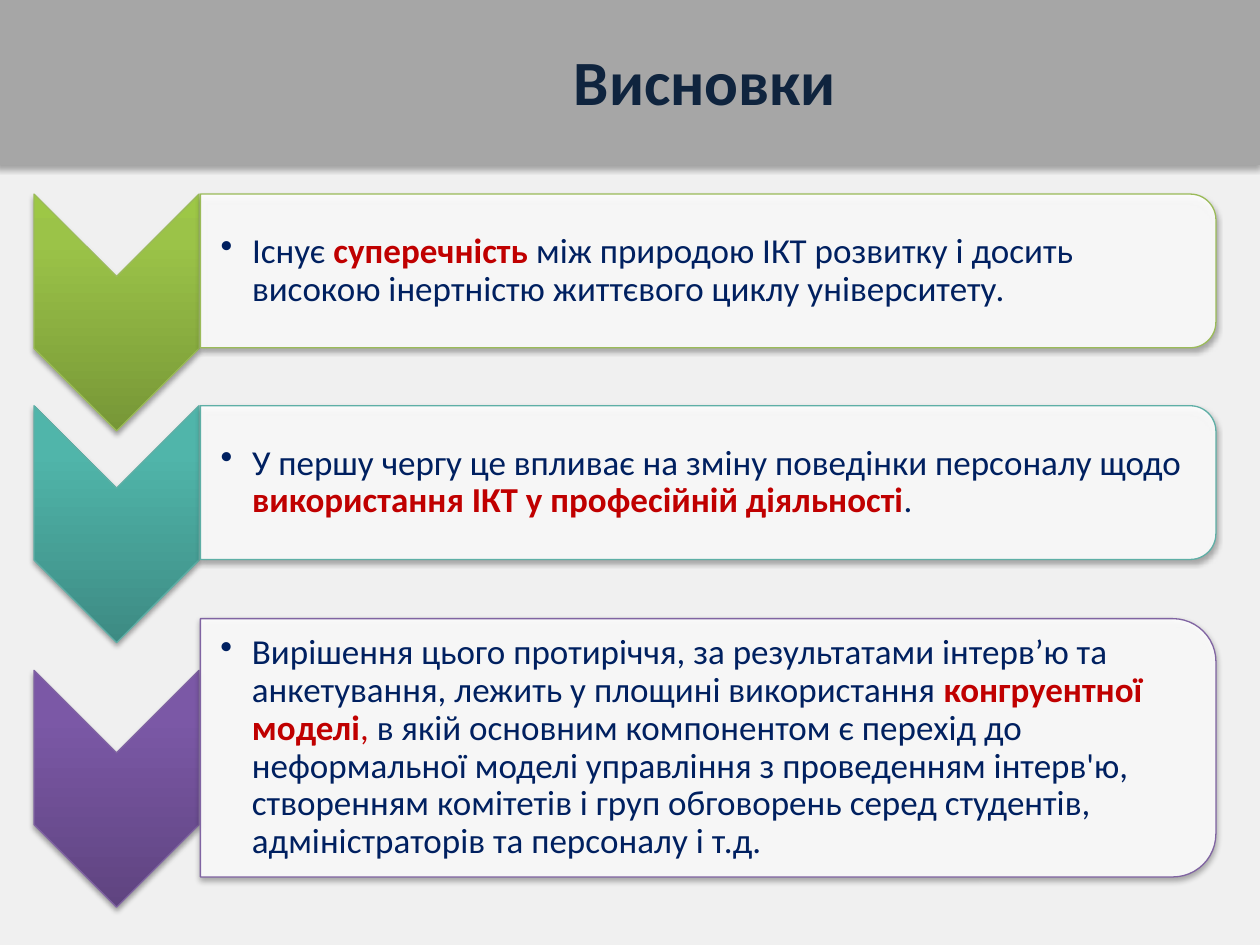
from lxml.etree import SubElement
from pptx import Presentation
from pptx.dml.color import RGBColor
from pptx.enum.shapes import MSO_SHAPE as Kind
from pptx.enum.text import MSO_ANCHOR as Anchor, PP_ALIGN as Align
from pptx.oxml import parse_xml
from pptx.oxml.ns import nsdecls, qn
from pptx.util import Inches, Pt

HUES = {"navy": "002060", "red": "C00000", "title": "0F243E",
        "veil": "D9D9D9", "band": "A6A6A6", "card": "FFFFFF"}
TITLE = "Висновки"
# fmt: off
STEPS = [
    {"top": 1.54, "high": 1.22, "arrow": 1.54, "line": "9BBB59",
     "grad": ["779737", "9BC348", "9DC746"],
     "runs": [("Існує", "navy", False), (" суперечність ", "red", True),
              ("між природою ІКТ розвитку і досить високою інертністю "
               "життєвого циклу університету.", "navy", False)]},
    {"top": 3.22, "high": 1.22, "arrow": 3.22, "line": "5EAFA6",
     "grad": ["3D8B83", "50B5AA", "4EB8AC"],
     "runs": [("У першу чергу це впливає на зміну поведінки персоналу щодо ",
               "navy", False),
              ("використання ІКТ у професійній діяльності", "red", True),
              (".", "navy", False)]},
    {"top": 4.91, "high": 2.05, "arrow": 5.32, "line": "8064A2",
     "grad": ["5F4480", "7B58A6", "7C57A8"],
     "runs": [("Вирішення цього протиріччя, за результатами інтерв’ю та "
               "анкетування, лежить у площині використання ", "navy", False),
              ("конгруентної моделі", "red", True), (", ", "red", False),
              ("в якій основним компонентом є перехід до неформальної моделі "
               "управління з проведенням інтерв'ю, створенням комітетів і груп "
               "обговорень серед студентів, адміністраторів та персоналу і т.д.",
               "navy", False)]},
]
# fmt: on
ARROW_X, ARROW_W, ARROW_H = 0.27, 1.31, 1.88
CARD_X, CARD_W = 1.59, 8.06


def add_box(shapes, kind, x, y, w, h, fill=None, alpha=100, line=None, turn=False):
    """Add a shape that covers the given area, turned a quarter if asked."""
    if turn:
        x, y, w, h = x + (w - h) / 2, y + (h - w) / 2, h, w
    box = shapes.add_shape(kind, *map(Inches, (x, y, w, h)))
    box.rotation = 90 if turn else 0
    box.shadow.inherit = False
    if fill:
        box.fill.solid()
        box.fill.fore_color.rgb = RGBColor.from_string(fill)
        tone = box._element.spPr.find(qn("a:solidFill"))[0]
        SubElement(tone, qn("a:alpha"), val=str(alpha * 1000))
    if line:
        box.line.color.rgb = RGBColor.from_string(line)
        box.line.width = Pt(0.75)
    else:
        box.line.fill.background()
    return box


def add_shade(box, alpha, blur, dist):
    """Give a shape a soft shadow below it."""
    box._element.spPr.find(qn("a:effectLst")).append(parse_xml(
        f'<a:outerShdw {nsdecls("a")} blurRad="{Pt(blur)}" dist="{Pt(dist)}" '
        f'dir="5400000" rotWithShape="0"><a:srgbClr val="000000">'
        f'<a:alpha val="{alpha * 1000}"/></a:srgbClr></a:outerShdw>'))


def add_grad(box, tones):
    """Fill a shape with a gradient that rises from the bottom."""
    stops = "".join(f'<a:gs pos="{pos * 1000}"><a:srgbClr val="{tone}"/></a:gs>'
                    for pos, tone in zip((0, 80, 100), tones))
    box.fill.background()
    props = box._element.spPr
    props.replace(props.find(qn("a:noFill")), parse_xml(
        f'<a:gradFill {nsdecls("a")} rotWithShape="0"><a:gsLst>{stops}</a:gsLst>'
        f'<a:lin ang="16200000" scaled="0"/></a:gradFill>'))


def add_text(shapes, step):
    """Add the bulleted text of one card."""
    inset = step["high"] * 0.05
    box = shapes.add_textbox(Inches(CARD_X), Inches(step["top"] + inset),
                             Inches(CARD_W - inset), Inches(step["high"] - 2 * inset))
    frame = box.text_frame
    frame.word_wrap = True
    frame.vertical_anchor = Anchor.MIDDLE
    frame.margin_left = Inches(0.16)
    frame.margin_top = frame.margin_right = frame.margin_bottom = Inches(0.01)
    para = frame.paragraphs[0]
    para.line_spacing = 0.9
    props = para._p.get_or_add_pPr()
    props.set("marL", str(Inches(0.25)))
    props.set("indent", str(Inches(-0.25)))
    SubElement(props, qn("a:buChar"), char="•")
    para.font.size = Pt(20)
    para.font.name = "Calibri"
    for text, hue, bold in step["runs"]:
        run = para.add_run()
        run.text = text
        run.font.bold = bold
        run.font.color.rgb = RGBColor.from_string(HUES[hue])


def add_title(slide):
    """Place and format the title above the band."""
    title = slide.shapes.title
    slide.shapes._spTree.append(title._element)
    title.left, title.top, title.width, title.height = map(
        Inches, (1.31, 0.13, 8.57, 1.02))
    title.text_frame.text = TITLE
    title.text_frame.vertical_anchor = Anchor.MIDDLE
    para = title.text_frame.paragraphs[0]
    para.alignment = Align.CENTER
    para.font.name = "Calibri"
    para.font.size = Pt(36)
    para.font.bold = True
    para.font.color.rgb = RGBColor.from_string(HUES["title"])


def main():
    """Build the slide and save it."""
    deck = Presentation()
    deck.slide_width, deck.slide_height = Inches(10), Inches(7.5)
    slide = deck.slides.add_slide(deck.slide_layouts[5])
    shapes = slide.shapes
    add_box(shapes, Kind.RECTANGLE, 0, 0, 10, 7.5, HUES["veil"], 39)
    band = add_box(shapes, Kind.RECTANGLE, -0.04, 0, 10.04, 1.31, HUES["band"])
    add_shade(band, 32, 3.5, 2.2)
    add_title(slide)
    for step in STEPS:
        arrow = add_box(shapes, Kind.CHEVRON, ARROW_X, step["arrow"],
                        ARROW_W, ARROW_H, line=step["line"], turn=True)
        add_grad(arrow, step["grad"])
        card = add_box(shapes, Kind.ROUND_2_SAME_RECTANGLE, CARD_X, step["top"],
                       CARD_W, step["high"], HUES["card"], 90, step["line"], True)
        for box in (arrow, card):
            add_shade(box, 35, 3.1, 1.8)
        add_text(shapes, step)
    deck.save("out.pptx")


if __name__ == "__main__":
    main()
